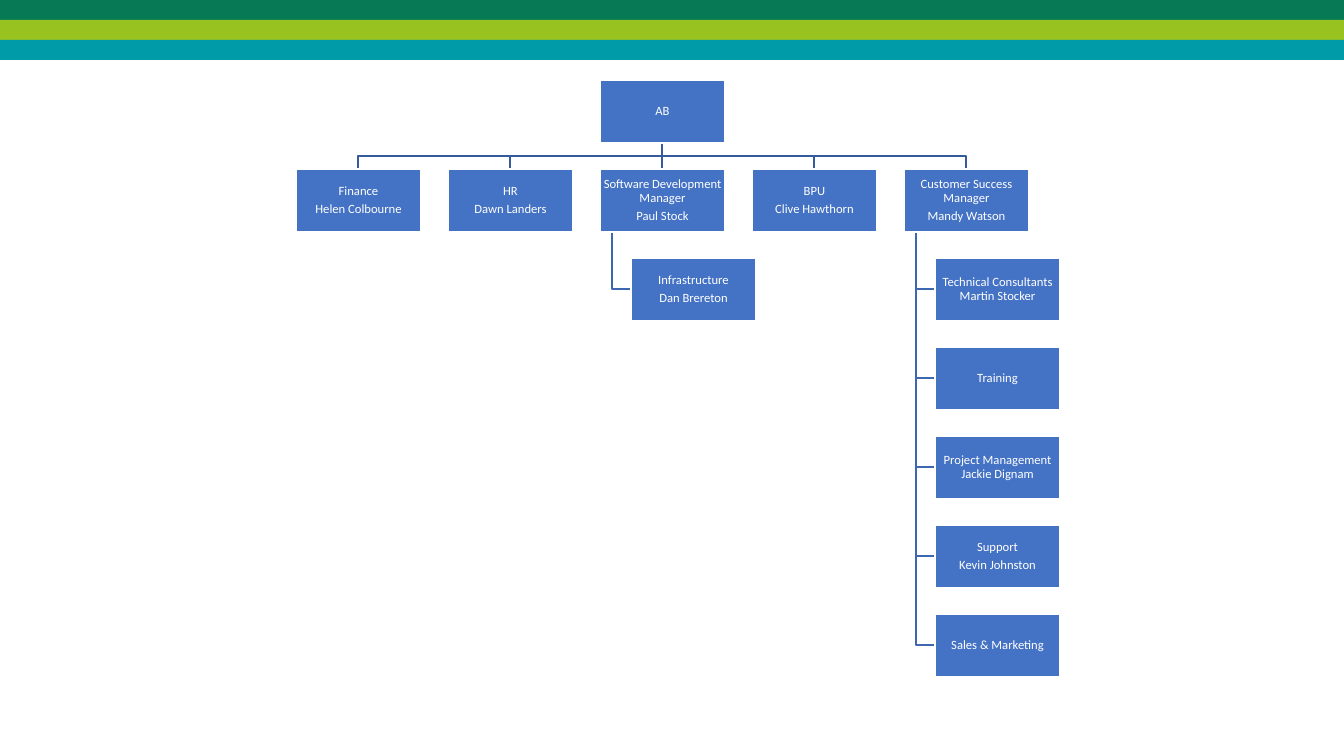
from pptx import Presentation
from pptx.dml.color import RGBColor
from pptx.enum.shapes import MSO_CONNECTOR as LINE, MSO_SHAPE as SHAPE
from pptx.enum.text import MSO_ANCHOR as ANCHOR, PP_ALIGN as ALIGN
from pptx.oxml.ns import qn
from pptx.util import Emu, Pt

PX = 914400 / 100.8
WIDE, HIGH = 125, 63
LEFT, TOP = 296, 80
STEP, ROW = 152, 89
INSET, STEM = 31, 12
BLUE, WHITE = "4472C4", "FFFFFF"
UPPER, LOWER = "365B9D", "3E67B2"

prs = Presentation()
prs.slide_width, prs.slide_height = Emu(round(1344 * PX)), Emu(round(756 * PX))
slide = prs.slides.add_slide(prs.slide_layouts[6])
shapes = slide.shapes


def rgb(code):
    return RGBColor.from_string(code)


def rect(x, y, w, h, color):
    box = shapes.add_shape(SHAPE.RECTANGLE, *[Emu(round(n * PX)) for n in (x, y, w, h)])
    box.shadow.inherit = False
    box.fill.solid()
    box.fill.fore_color.rgb = rgb(color)
    return box


# Header stripes
for i, color in enumerate(["077A55", "97C21F", "009BA8"]):
    rect(0, i * 20, 1344, 20, color).line.fill.background()

# Staff: (column, row, lines of text); row 0 is the head, rows from 2 are reports
staff = [
    (2, 0, ["AB"]),
    (0, 1, ["Finance", "Helen Colbourne"]),
    (1, 1, ["HR", "Dawn Landers"]),
    (2, 1, ["Software Development Manager", "Paul Stock"]),
    (2, 2, ["Infrastructure", "Dan Brereton"]),
    (3, 1, ["BPU", "Clive Hawthorn"]),
    (4, 1, ["Customer Success Manager", "Mandy Watson"]),
    (4, 2, ["Technical Consultants Martin Stocker"]),
    (4, 3, ["Training"]),
    (4, 4, ["Project Management Jackie Dignam"]),
    (4, 5, ["Support", "Kevin Johnston"]),
    (4, 6, ["Sales & Marketing"]),
]

# Links from the head to managers, and from managers to reports
hub, base = LEFT + 2 * STEP + WIDE // 2, TOP + HIGH
for col, row, _ in staff[1:]:
    x, y = LEFT + col * STEP, TOP + row * ROW
    if row == 1:
        mid, bend = x + WIDE // 2, (base + y) // 2
        points = [(hub, base), (hub, bend), (mid, bend), (mid, y)]
    else:
        stem, mid = x + STEM, y + HIGH // 2
        points = [(stem, base + ROW), (stem, mid), (x + INSET, mid)]
    if points[0][0] == points[-1][0]:
        ends = [Emu(round(n * PX)) for n in points[0] + points[-1]]
        link = shapes.add_connector(LINE.STRAIGHT, *ends)
        link._element.spPr.append(link._element.makeelement(qn("a:effectLst"), {}))
    else:
        path = shapes.build_freeform(*points[0], scale=PX)
        path.add_line_segments(points[1:], close=False)
        link = path.convert_to_shape()
        link.shadow.inherit = False
        link.fill.background()
    link.line.color.rgb = rgb(UPPER if row == 1 else LOWER)
    link.line.width = Pt(1)

# Staff boxes
for col, row, lines in staff:
    x = LEFT + col * STEP + (INSET if row > 1 else 0)
    box = rect(x, TOP + row * ROW, WIDE, HIGH, BLUE)
    box.line.color.rgb = rgb(WHITE)
    box.line.width = Pt(1)
    frame = box.text_frame
    frame.word_wrap = True
    frame.vertical_anchor = ANCHOR.MIDDLE
    frame.margin_left = frame.margin_right = Emu(round(PX))
    frame.margin_top = frame.margin_bottom = Emu(round(PX))
    frame.text = "\n".join(lines)
    for para in frame.paragraphs:
        para.alignment = ALIGN.CENTER
        para.line_spacing = 0.9
        para.space_after = Pt(3.15)
        para.font.name = "Calibri"
        para.font.size = Pt(9)
        para.font.color.rgb = rgb(WHITE)

prs.save("out.pptx")
